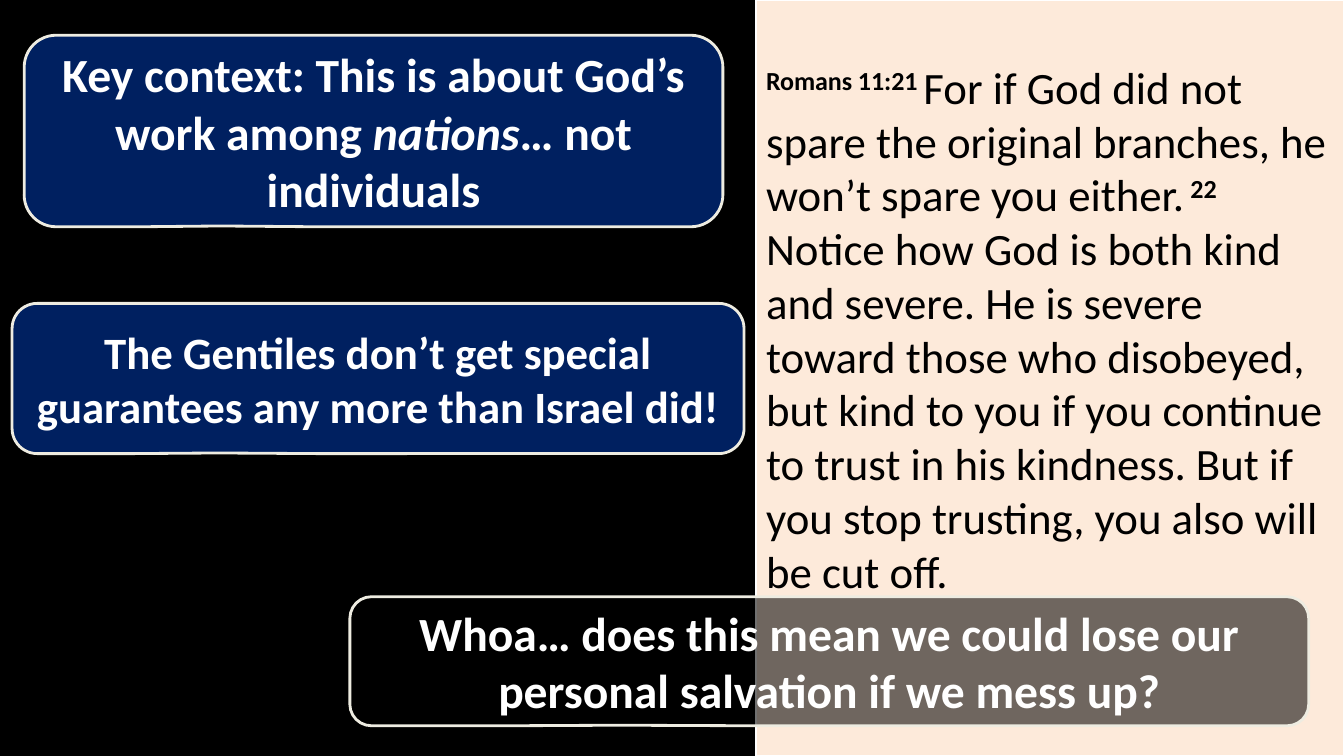
from dataclasses import dataclass

from lxml.etree import SubElement
from pptx import Presentation
from pptx.dml.color import RGBColor
from pptx.enum.shapes import MSO_SHAPE
from pptx.enum.text import MSO_ANCHOR, PP_ALIGN
from pptx.oxml.ns import qn
from pptx.util import Inches, Pt

COLORS = {
    "black": "000000",
    "white": "FFFFFF",
    "peach": "FDEADA",
    "navy": "002060",
    "cream": "EEECE1",
}
CALLOUT_ADJUSTMENTS = (-0.219, 0.496, 0.167)


@dataclass
class Run:
    text: str
    bold: bool = True
    italic: bool = False
    superscript: bool = False


@dataclass
class Box:
    left: float
    top: float
    width: float
    height: float
    fill: str
    size: int
    runs: list[Run]
    line: str = "cream"
    line_width: float = 2
    color: str = "white"
    kind: MSO_SHAPE = MSO_SHAPE.ROUNDED_RECTANGULAR_CALLOUT
    adjustments: tuple[float, ...] = CALLOUT_ADJUSTMENTS
    opacity: int = 100
    anchor: MSO_ANCHOR = MSO_ANCHOR.MIDDLE
    align: PP_ALIGN = PP_ALIGN.CENTER
    margin_top: float = 0.05


BOXES = [
    Box(7.5, 0, 5.83, 7.5, "peach", 32, [
        Run("Romans 11:21 ", superscript=True),
        Run("For if God did not spare the original branches, "
            "he won’t spare you either.", bold=False),
        Run(" 22 ", superscript=True),
        Run("Notice how God is both kind and severe. He is severe toward "
            "those who disobeyed, but kind to you if you continue to trust "
            "in his kindness. But if you stop trusting, you also will be "
            "cut off.", bold=False),
    ], line="white", line_width=1.5, color="black", kind=MSO_SHAPE.RECTANGLE,
        adjustments=(), anchor=MSO_ANCHOR.TOP, align=PP_ALIGN.LEFT,
        margin_top=0.59),
    Box(3.47, 5.92, 9.51, 1.28, "black", 34, [
        Run("Whoa… does this mean we could lose our personal salvation "
            "if we mess up?"),
    ], opacity=56),
    Box(0.24, 0.35, 6.93, 1.9, "navy", 34, [
        Run("Key context: This is about God’s work among "),
        Run("nations", italic=True),
        Run("… not individuals"),
    ]),
    Box(0.12, 3.01, 7.26, 1.49, "navy", 32, [
        Run("The Gentiles don’t get special guarantees any more than "
            "Israel did!"),
    ]),
]


def rgb(name: str) -> RGBColor:
    return RGBColor.from_string(COLORS[name])


def add_run(p, run: Run, box: Box) -> None:
    r = p.add_run()
    r.text = run.text
    font = {"name": "Calibri", "size": Pt(box.size),
            "bold": run.bold, "italic": run.italic}
    for key, value in font.items():
        setattr(r.font, key, value)
    r.font.color.rgb = rgb(box.color)
    if run.superscript:
        r._r.get_or_add_rPr().set("baseline", "30000")


def add_box(s, box: Box) -> None:
    lengths = (box.left, box.top, box.width, box.height)
    sp = s.shapes.add_shape(box.kind, *map(Inches, lengths))
    sp.shadow.inherit = False
    for i, value in enumerate(box.adjustments):
        sp.adjustments[i] = value
    sp.fill.solid()
    sp.fill.fore_color.rgb = rgb(box.fill)
    if box.opacity < 100:
        color = sp._element.spPr.find(qn("a:solidFill")).find(qn("a:srgbClr"))
        SubElement(color, qn("a:alpha")).set("val", str(box.opacity * 1000))
    sp.line.color.rgb = rgb(box.line)
    sp.line.width = Pt(box.line_width)
    tf = sp.text_frame
    frame = {"word_wrap": True, "vertical_anchor": box.anchor,
             "margin_top": Inches(box.margin_top)}
    for key, value in frame.items():
        setattr(tf, key, value)
    p = tf.paragraphs[0]
    p.alignment = box.align
    for run in box.runs:
        add_run(p, run, box)


def main() -> None:
    """Build the Romans 11 slide and save it."""
    prs = Presentation()
    prs.slide_width, prs.slide_height = Inches(13.33), Inches(7.5)
    s = prs.slides.add_slide(prs.slide_layouts[6])
    s.background.fill.solid()
    s.background.fill.fore_color.rgb = rgb("black")
    for box in BOXES:
        add_box(s, box)
    prs.save("out.pptx")


if __name__ == "__main__":
    main()
